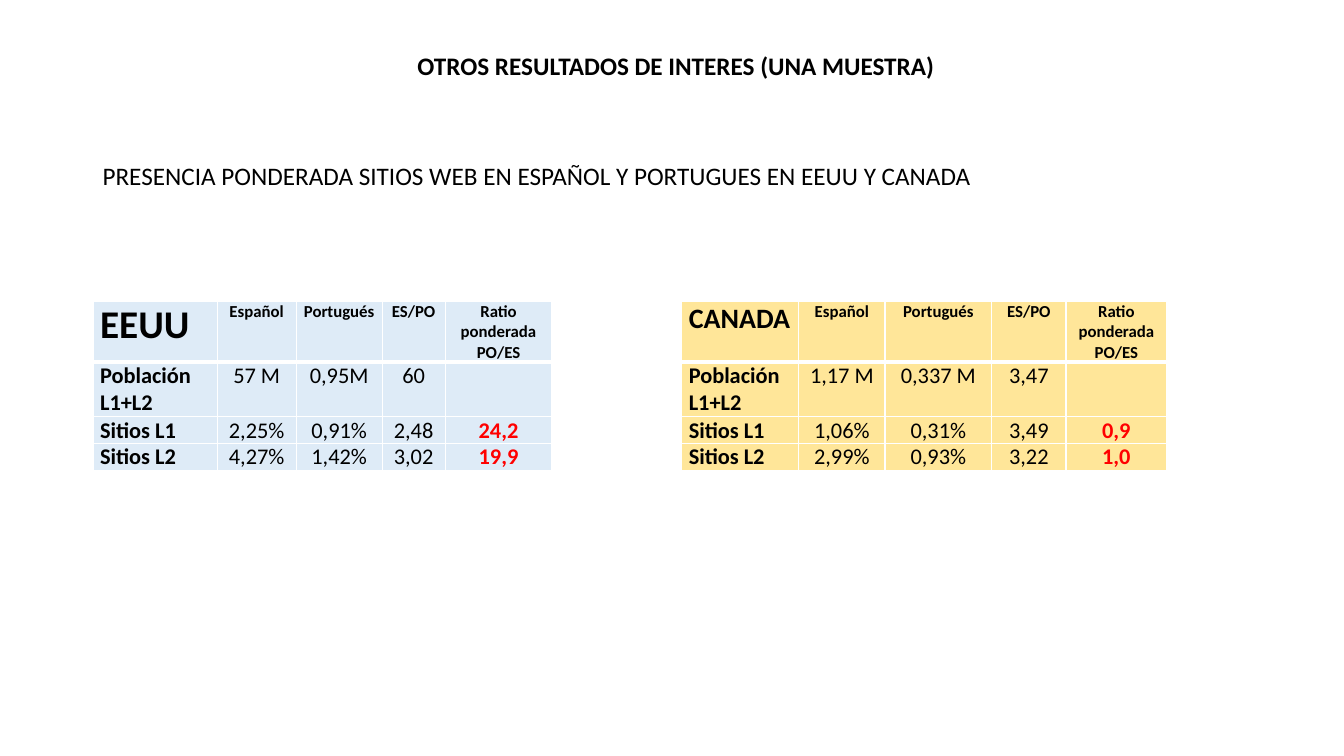
from pptx import Presentation
from pptx.dml.color import RGBColor
from pptx.enum.text import MSO_ANCHOR as Anchor, MSO_AUTO_SIZE as AutoSize, PP_ALIGN as Align
from pptx.oxml import parse_xml
from pptx.oxml.ns import nsdecls
from pptx.util import Pt

FONT = "Calibri"
BLACK, RED, WHITE = "000000", "FF0000", "FFFFFF"
TABLE_TOP = 215.4
ROW_HEIGHTS = [42, 39, 19.2, 19.2]
HEADINGS = ["Español", "Portugués", "ES/PO", "Ratio ponderada\nPO/ES"]
ROW_LABELS = ["Población L1+L2", "Sitios L1", "Sitios L2"]
COUNTRIES = [
    {
        "name": "EEUU", "name_size": 28, "left": 66.5, "fill": "DEEBF7",
        "widths": [88.6, 56.5, 61.4, 45, 76.3],
        "values": [["57 M", "0,95M", "60", ""],
                   ["2,25%", "0,91%", "2,48", "24,2"],
                   ["4,27%", "1,42%", "3,02", "19,9"]],
    },
    {
        "name": "CANADA", "name_size": 20, "left": 487, "fill": "FFE699",
        "widths": [83.5, 61.7, 76.3, 53, 72],
        "values": [["1,17 M", "0,337 M", "3,47", ""],
                   ["1,06%", "0,31%", "3,49", "0,9"],
                   ["2,99%", "0,93%", "3,22", "1,0"]],
    },
]


def set_font(paragraph, size, bold, color=BLACK):
    font = paragraph.font
    font.name, font.size, font.bold = FONT, Pt(size), bold
    font.color.rgb = RGBColor.from_string(color)


def set_borders(cell, top, bottom):
    """Give a cell white borders, 1 pt at the sides and as given above and below."""
    properties = cell._tc.get_or_add_tcPr()
    for index, (side, width) in enumerate([("L", 1), ("R", 1), ("T", top), ("B", bottom)]):
        properties.insert(index, parse_xml(
            f'<a:ln{side} {nsdecls("a")} w="{Pt(width)}"><a:solidFill>'
            f'<a:srgbClr val="{WHITE}"/></a:solidFill></a:ln{side}>'))


presentation = Presentation()
presentation.slide_width, presentation.slide_height = Pt(960), Pt(540)
slide = presentation.slides.add_slide(presentation.slide_layouts[5])

title = slide.shapes.title
title.left, title.top, title.width, title.height = Pt(291), Pt(32), Pt(387.4), Pt(29)
subtitle = slide.shapes.add_textbox(Pt(66.2), Pt(111), Pt(658), Pt(29))
headlines = [
    (title, "OTROS RESULTADOS DE INTERES (UNA MUESTRA)", True),
    (subtitle, "PRESENCIA PONDERADA SITIOS WEB EN ESPAÑOL Y PORTUGUES EN EEUU Y CANADA", False),
]
for shape, text, bold in headlines:
    frame = shape.text_frame
    frame.text = text
    frame.word_wrap = False
    frame.auto_size = AutoSize.SHAPE_TO_FIT_TEXT
    frame.vertical_anchor = Anchor.TOP
    frame.paragraphs[0].alignment = Align.LEFT
    set_font(frame.paragraphs[0], 18, bold)

for country in COUNTRIES:
    widths = country["widths"]
    rows = [[country["name"]] + HEADINGS]
    rows += [[label] + values for label, values in zip(ROW_LABELS, country["values"])]
    table = slide.shapes.add_table(
        len(rows), len(widths), Pt(country["left"]), Pt(TABLE_TOP),
        Pt(sum(widths)), Pt(sum(ROW_HEIGHTS))).table
    table.horz_banding = False
    for column, width in zip(table.columns, widths):
        column.width = Pt(width)
    for row, height in zip(table.rows, ROW_HEIGHTS):
        row.height = Pt(height)

    for row_index, texts in enumerate(rows):
        is_header = row_index == 0
        for column_index, text in enumerate(texts):
            is_label = column_index == 0
            is_ratio = column_index == len(widths) - 1
            cell = table.cell(row_index, column_index)
            cell.text = text
            cell.margin_left = cell.margin_right = Pt(5)
            cell.margin_top = cell.margin_bottom = Pt(0)
            cell.fill.solid()
            cell.fill.fore_color.rgb = RGBColor.from_string(country["fill"])
            set_borders(cell, 3 if row_index == 1 else 1, 3 if is_header else 1)
            if is_header:
                size = country["name_size"] if is_label else 12
            else:
                size = 16
            color = RED if is_ratio and not is_header else BLACK
            for paragraph in cell.text_frame.paragraphs:
                paragraph.alignment = Align.JUSTIFY if is_label else Align.CENTER
                set_font(paragraph, size, is_header or is_label or is_ratio, color)

presentation.save("out.pptx")
